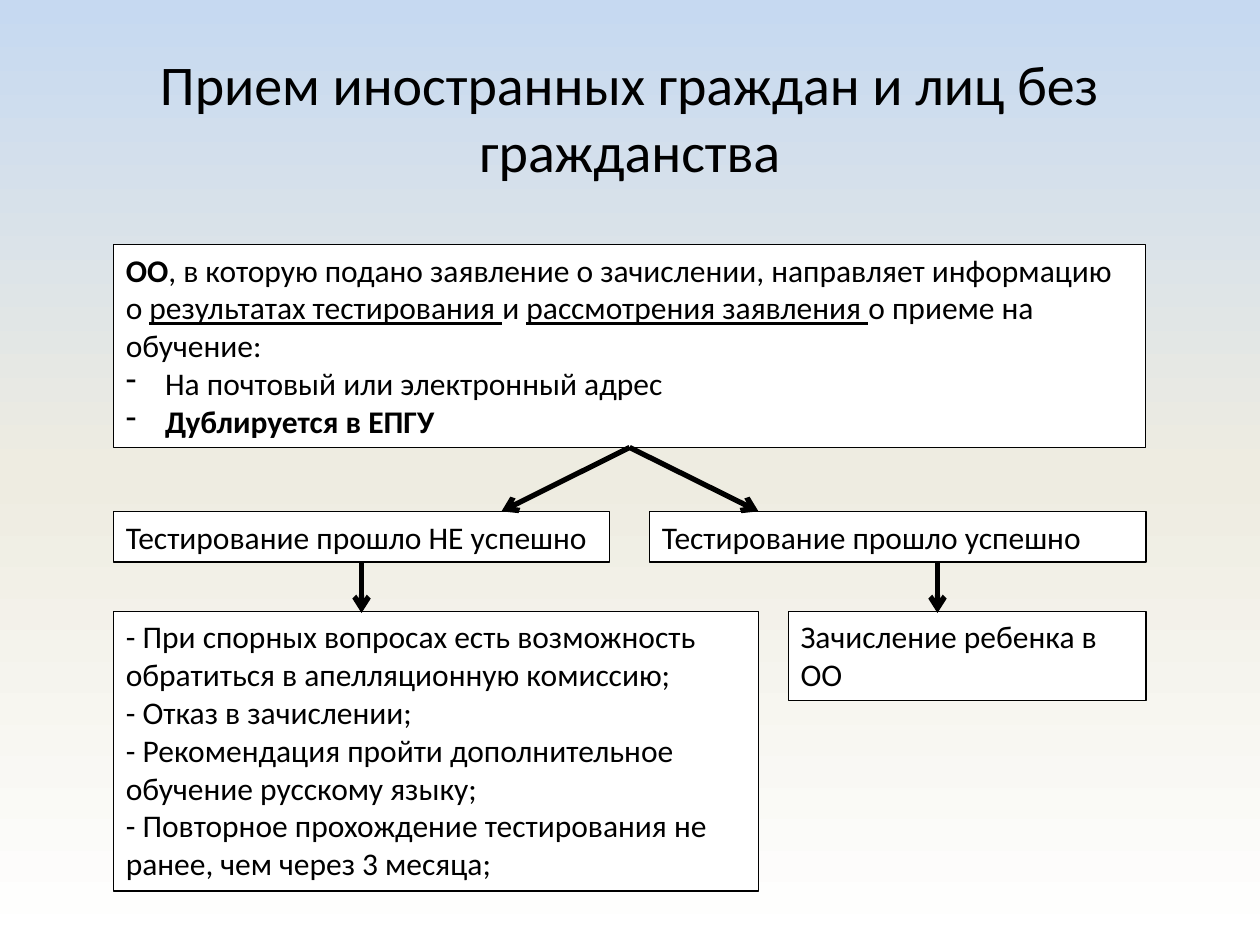
from copy import deepcopy
from dataclasses import dataclass

from pptx import Presentation
from pptx.dml.color import RGBColor
from pptx.enum.shapes import MSO_CONNECTOR, MSO_SHAPE
from pptx.enum.text import MSO_ANCHOR, MSO_AUTO_SIZE, PP_ALIGN
from pptx.oxml.ns import qn
from pptx.util import Pt
from lxml import etree

RECT = MSO_SHAPE.RECTANGLE
STRAIGHT = MSO_CONNECTOR.STRAIGHT
TOP, MIDDLE = MSO_ANCHOR.TOP, MSO_ANCHOR.MIDDLE
LEFT, CENTER = PP_ALIGN.LEFT, PP_ALIGN.CENTER
GROW = MSO_AUTO_SIZE.SHAPE_TO_FIT_TEXT
BOTTOM_SITE = 2


@dataclass(frozen=True)
class Theme:
    font: str = "Calibri"
    ink: str = "000000"
    paper: str = "FFFFFF"
    sky: tuple = ("C6D9F1", "EEECE1", "FFFFFF")
    title_size: float = 32
    body_size: float = 18
    border: float = 0.75
    arrow: float = 3
    indent: float = 22.5


class Deck:
    def __init__(self, prs, theme):
        self.theme = theme
        self.s = prs.slides.add_slide(prs.slide_layouts[5])  # title only

    def background(self):
        fill = self.s.background.fill
        fill.gradient()
        fill.gradient_angle = 270  # counter-clockwise: runs top to bottom
        stops = self.s.element.find(".//" + qn("a:gsLst"))
        stops.append(deepcopy(stops[-1]))
        for i, (stop, color) in enumerate(zip(fill.gradient_stops, self.theme.sky)):
            stop.position = i / 2
            stop.color.rgb = RGBColor.from_string(color)

    def run(self, p, text, size, style=""):
        r = p.add_run()
        r.text = text
        r.font.name = self.theme.font
        r.font.size = Pt(size)
        r.font.color.rgb = RGBColor.from_string(self.theme.ink)
        r.font.bold = "b" in style
        r.font.underline = "u" in style

    def dash(self, p):
        pPr = p._p.get_or_add_pPr()
        pPr.set("marL", str(Pt(self.theme.indent)))
        pPr.set("indent", str(-Pt(self.theme.indent)))
        etree.SubElement(pPr, qn("a:buChar"), char="-")

    def title(self, text, x, y, w, h):
        sp = self.s.shapes.title
        sp.left, sp.top, sp.width, sp.height = Pt(x), Pt(y), Pt(w), Pt(h)
        tf = sp.text_frame
        tf.vertical_anchor = MIDDLE
        p = tf.paragraphs[0]
        p.alignment = CENTER
        self.run(p, text, self.theme.title_size)

    def box(self, x, y, w, h, paragraphs, dashed=()):
        """Each paragraph is a list of (text, style) runs; None breaks the line."""
        sp = self.s.shapes.add_shape(RECT, Pt(x), Pt(y), Pt(w), Pt(h))
        sp.shadow.inherit = False
        sp.fill.solid()
        sp.fill.fore_color.rgb = RGBColor.from_string(self.theme.paper)
        sp.line.color.rgb = RGBColor.from_string(self.theme.ink)
        sp.line.width = Pt(self.theme.border)
        tf = sp.text_frame
        tf.word_wrap = True
        tf.auto_size = GROW
        tf.vertical_anchor = TOP
        for i, runs in enumerate(paragraphs):
            p = tf.add_paragraph() if i else tf.paragraphs[0]
            p.alignment = LEFT
            if i in dashed:
                self.dash(p)
            for item in runs:
                if item is None:
                    p.add_line_break()
                else:
                    self.run(p, item[0], self.theme.body_size, item[1])
        return sp

    def arrow(self, x1, y1, x2, y2, source=None):
        line = self.s.shapes.add_connector(STRAIGHT, Pt(x1), Pt(y1), Pt(x2), Pt(y2))
        if source is not None:
            line.begin_connect(source, BOTTOM_SITE)
        line.line.color.rgb = RGBColor.from_string(self.theme.ink)
        line.line.width = Pt(self.theme.arrow)
        etree.SubElement(line.line._get_or_add_ln(), qn("a:tailEnd"), type="arrow")
        etree.SubElement(line._element.spPr, qn("a:effectLst"))


def main():
    prs = Presentation()
    prs.slide_width, prs.slide_height = Pt(720), Pt(540)
    deck = Deck(prs, Theme())
    deck.background()
    deck.title("Прием иностранных граждан и лиц без гражданства", 36, 21.6, 648, 90)

    # Shared margins and rows
    left, width = 64.8, 590
    right = left + width
    info_y, info_h = 139.7, 116
    test_y, test_w, test_h = 292.2, 283.6, 29
    result_y = 349.3
    fail_w, enrol_w = 368.6, 204.4

    # Notification by the school
    info = deck.box(left, info_y, width, info_h, [
        [("ОО", "b"),
         (", в которую подано заявление о зачислении, направляет информацию о ", ""),
         ("результатах тестирования ", "u"), ("и ", ""),
         ("рассмотрения заявления ", "u"), ("о приеме на обучение:", "")],
        [("На почтовый или электронный адрес", "")],
        [("Дублируется в ЕПГУ", "b")],
    ], dashed=(1, 2))

    # Test outcomes
    deck.box(right - test_w, test_y, test_w, test_h,
             [[("Тестирование прошло успешно", "")]])
    failed = deck.box(left, test_y, test_w, test_h,
                      [[("Тестирование прошло НЕ успешно", "")]])

    # Consequences
    deck.box(left, result_y, fail_w, 159.8, [
        [("- При спорных вопросах есть возможность обратиться в апелляционную комиссию;", "")],
        [("- Отказ в зачислении;", ""), None,
         ("- Рекомендация пройти дополнительное обучение русскому языку;", "")],
        [("- Повторное прохождение тестирования не ранее, чем через 3 месяца;", "")],
    ])
    deck.box(right - enrol_w, result_y, enrol_w, 51,
             [[("Зачисление ребенка в ОО", "")]])

    # Arrows between the rows
    middle, info_end, test_end = left + width / 2, info_y + info_h, test_y + test_h
    for x in (286.6, 433.4):
        deck.arrow(middle, info_end, x, test_y, info)
    deck.arrow(left + test_w / 2, test_end, left + test_w / 2, result_y + 1, failed)
    deck.arrow(535.7, test_end, 535.7, result_y + 1)

    prs.save("out.pptx")


if __name__ == "__main__":
    main()
